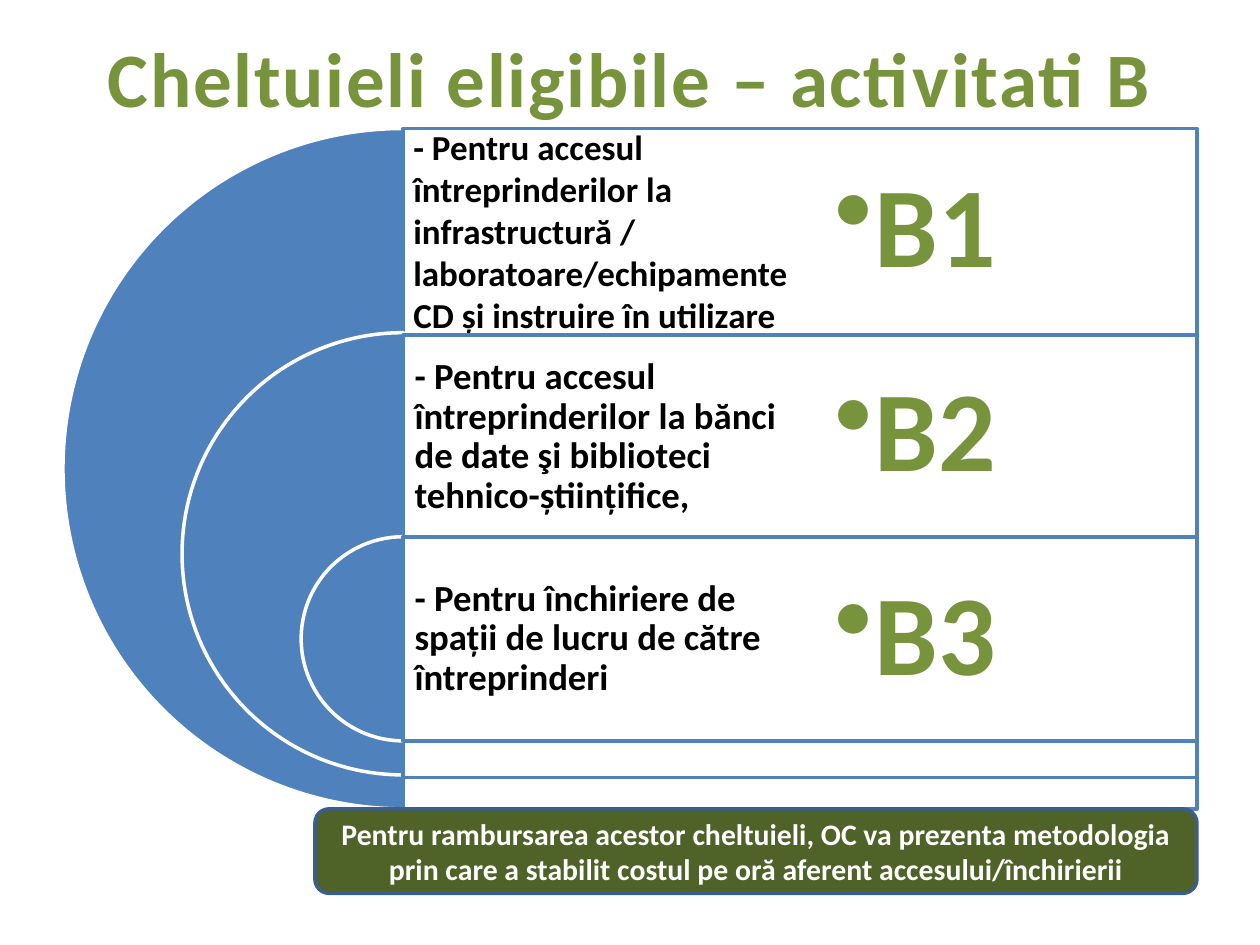
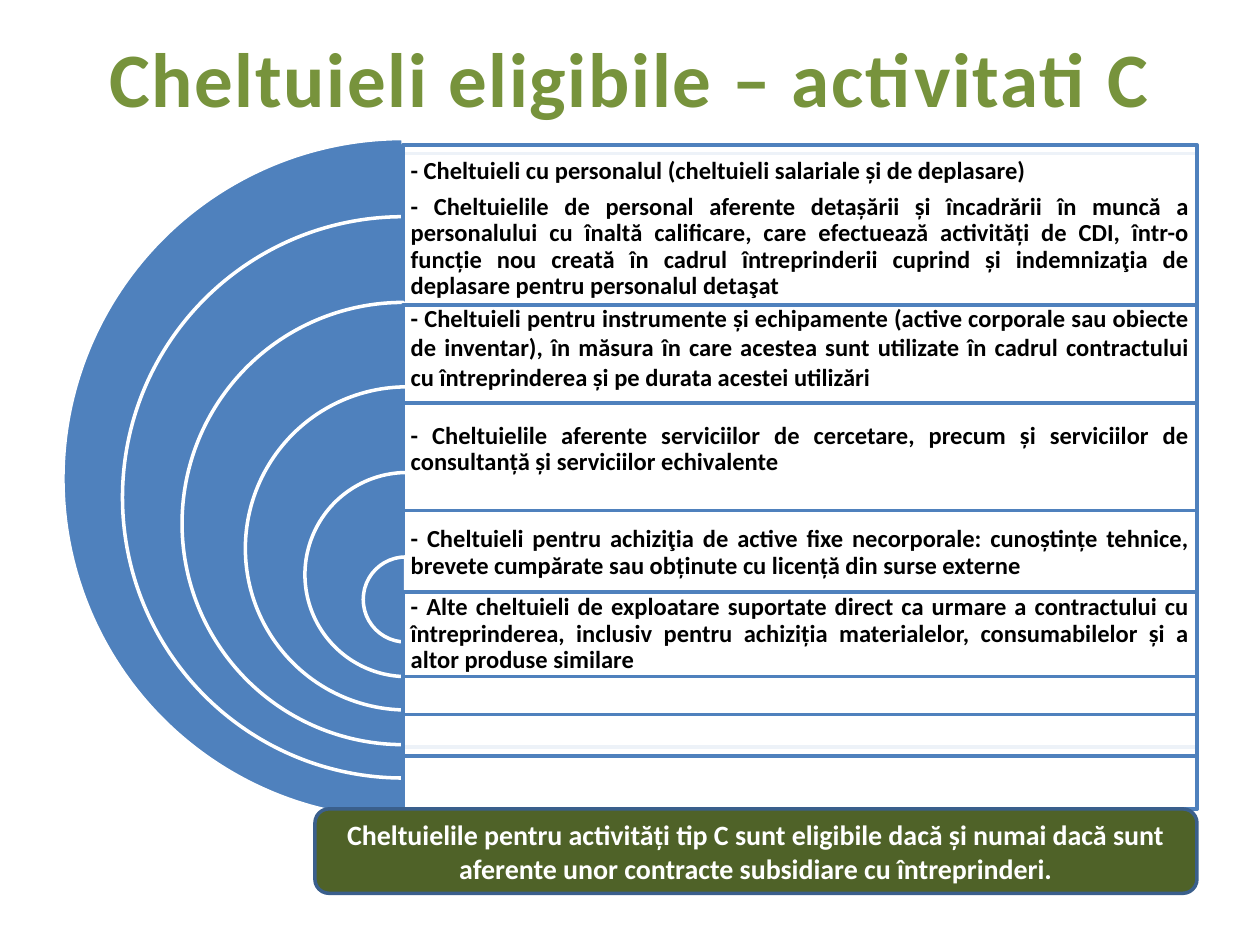
"""Build two slides on eligible costs, each a set of nested half rings with text panels."""
from dataclasses import dataclass

from lxml import etree
from pptx import Presentation
from pptx import util as u
from pptx.dml.color import RGBColor
from pptx.enum import shapes, text
from pptx.oxml.ns import qn


@dataclass(frozen=True)
class Theme:
    font: str = "Calibri"
    green: str = "77933C"
    dark_green: str = "4F6228"
    blue: str = "4F81BD"
    navy: str = "3A5F8C"
    white: str = "FFFFFF"
    black: str = "000000"
    title_size: int = 44
    label_size: int = 65
    line_width: int = 2
    panel_opacity: int = 90


THEME = Theme()
LEFT, CENTER, JUSTIFY = text.PP_ALIGN.LEFT, text.PP_ALIGN.CENTER, text.PP_ALIGN.JUSTIFY
ROUND, PIE, RECT = (shapes.MSO_SHAPE.ROUNDED_RECTANGLE, shapes.MSO_SHAPE.PIE,
                    shapes.MSO_SHAPE.RECTANGLE)

RING_AXIS = 3.2
OUTER_RING = 5.4
PANEL_WIDTH = 6.3
TITLE_BOX = (0.5, 0.08, 9, 1.05)
FOOTER_BOX = (2.5, 6.42, 7, 0.67)

ACCESS_STYLE = dict(size=21, spacing=0.9, after=0.35, inset=0.09)
COST_STYLE = dict(size=14, spacing=0.9, after=0.35, inset=0.06, align=JUSTIFY)

SLIDES = [
    dict(
        title="Cheltuieli eligibile – activitati B",
        footer="Pentru rambursarea acestor cheltuieli, OC va prezenta metodologia "
               "prin care a stabilit costul pe oră aferent accesului/închirierii",
        footer_size=17,
        ring_step=1.89,
        text_width=PANEL_WIDTH / 2,
        style=ACCESS_STYLE,
        rows=[
            dict(ring_top=1.02, panel=(1.02, 5.4), height=1.62, label="B1",
                 style=dict(size=20, spacing=1, inset=0.08),
                 costs=["- Pentru accesul întreprinderilor la infrastructură / "
                        "laboratoare/echipamente CD și instruire în utilizare"]),
            dict(ring_top=2.64, panel=(2.66, 3.51), height=1.62, label="B2",
                 costs=["- Pentru accesul întreprinderilor la bănci de date şi "
                        "biblioteci tehnico-științifice,"]),
            dict(ring_top=4.26, panel=(4.26, 1.62), height=1.62, label="B3",
                 costs=["- Pentru închiriere de spații de lucru de către întreprinderi"]),
        ],
    ),
    dict(
        title="Cheltuieli eligibile – activitati C",
        footer="Cheltuielile pentru activități tip C sunt eligibile dacă și numai dacă "
               "sunt aferente unor contracte subsidiare cu întreprinderi.",
        footer_size=16,
        ring_step=0.945,
        text_width=PANEL_WIDTH,
        style=COST_STYLE,
        rows=[
            dict(ring_top=1.1, panel=(1.22, 5.2)),
            dict(ring_top=1.72, panel=(1.15, 5.27), height=1.34,
                 costs=["- Cheltuieli cu personalul (cheltuieli salariale și de deplasare)",
                        "- Cheltuielile de personal aferente detașării și încadrării în muncă "
                        "a personalului cu înaltă calificare, care efectuează activități de "
                        "CDI, într-o funcție nou creată în cadrul întreprinderii cuprind și "
                        "indemnizaţia de deplasare pentru personalul detaşat"]),
            dict(ring_top=2.4, panel=(2.42, 3.51), height=0.67,
                 style=dict(spacing=1, after=0),
                 costs=["- Cheltuieli pentru instrumente și echipamente (active corporale sau "
                        "obiecte de inventar), în măsura în care acestea sunt utilizate în "
                        "cadrul contractului cu întreprinderea și pe durata acestei utilizări"]),
            dict(ring_top=3.07, panel=(3.2, 2.8), height=0.74, shift=0.03,
                 costs=["- Cheltuielile aferente serviciilor de cercetare, precum și "
                        "serviciilor de consultanță și serviciilor echivalente"]),
            dict(ring_top=3.75, panel=(4.05, 1.62), height=0.68, shift=0.03,
                 costs=["- Cheltuieli pentru achiziţia de active fixe necorporale: cunoștințe "
                        "tehnice, brevete cumpărate sau obținute cu licență din surse externe"]),
            dict(ring_top=4.42, panel=(4.7, 0.67), height=0.67, shift=0.02,
                 costs=["- Alte cheltuieli de exploatare suportate direct ca urmare a "
                        "contractului cu întreprinderea, inclusiv pentru achiziția "
                        "materialelor, consumabilelor și a altor produse similare"]),
        ],
    ),
]


def inches(box):
    return [u.Inches(length) for length in box]


def write(holder, paragraphs, *, size, color=THEME.black, align=LEFT, spacing=1, after=0,
          inset=None, tracking=None, bullet_indent=None):
    """Fill a shape or text box with bold, vertically centred paragraphs."""
    frame = holder.text_frame
    frame.word_wrap = True
    frame.vertical_anchor = text.MSO_ANCHOR.MIDDLE
    if inset is not None:
        frame.margin_left = frame.margin_right = u.Inches(inset)
        frame.margin_top = frame.margin_bottom = u.Inches(inset)
    for index, words in enumerate(paragraphs):
        paragraph = frame.add_paragraph() if index else frame.paragraphs[0]
        paragraph.alignment = align
        paragraph.line_spacing = float(spacing)
        paragraph.space_after = u.Pt(size * after)
        run = paragraph.add_run()
        run.text = words
        run.font.name = THEME.font
        run.font.size = u.Pt(size)
        run.font.bold = True
        run.font.color.rgb = RGBColor.from_string(color)
        if tracking:
            run.font._element.set("spc", str(tracking * 100))
        if bullet_indent:
            properties = paragraph._p.get_or_add_pPr()
            properties.set("marL", str(u.Inches(bullet_indent)))
            properties.set("indent", str(-u.Inches(bullet_indent)))
            etree.SubElement(properties, qn("a:buChar")).set("char", "•")


def add_text(slide, box, paragraphs, **style):
    write(slide.shapes.add_textbox(*inches(box)), paragraphs, **style)


def add_figure(slide, preset, box, fill, line, opacity=None):
    figure = slide.shapes.add_shape(preset, *inches(box))
    figure.shadow.inherit = False
    figure.fill.solid()
    figure.fill.fore_color.rgb = RGBColor.from_string(fill)
    figure.line.color.rgb = RGBColor.from_string(line)
    figure.line.width = u.Pt(THEME.line_width)
    if opacity:
        color = figure._element.spPr.find(qn("a:solidFill"))[0]
        etree.SubElement(color, qn("a:alpha")).set("val", str(opacity * 1000))
    return figure


def add_row(slide, row, diameter, text_width, style):
    ring_left = RING_AXIS - diameter / 2 + row.get("shift", 0)
    ring = add_figure(slide, PIE, (ring_left, row["ring_top"], diameter, diameter),
                      THEME.blue, THEME.white)
    ring.adjustments[0], ring.adjustments[1] = 54, 162
    top, panel_height = row["panel"]
    add_figure(slide, RECT, (RING_AXIS, top, PANEL_WIDTH, panel_height),
               THEME.white, THEME.blue, THEME.panel_opacity)
    if "costs" in row:
        add_text(slide, (RING_AXIS, top, text_width, row["height"]), row["costs"],
                 **{**style, **row.get("style", {})})
    if "label" in row:
        label_box = (RING_AXIS + text_width, row["ring_top"], text_width, row["height"])
        add_text(slide, label_box, [row["label"]], size=THEME.label_size, color=THEME.green,
                 spacing=0.9, after=0.15, inset=0.27, bullet_indent=0.31)


def add_content(deck, content):
    slide = deck.slides.add_slide(deck.slide_layouts[6])
    add_text(slide, TITLE_BOX, [content["title"]], size=THEME.title_size, color=THEME.green,
             align=CENTER, tracking=1)
    for index, row in enumerate(content["rows"]):
        diameter = OUTER_RING - index * content["ring_step"]
        add_row(slide, row, diameter, content["text_width"], content["style"])
    footer = add_figure(slide, ROUND, FOOTER_BOX, THEME.dark_green, THEME.navy)
    write(footer, [content["footer"]], size=content["footer_size"], color=THEME.white,
          align=CENTER)


def main():
    deck = Presentation()
    deck.slide_width, deck.slide_height = u.Inches(10), u.Inches(7.5)
    for content in SLIDES:
        add_content(deck, content)
    deck.save("out.pptx")


if __name__ == "__main__":
    main()
